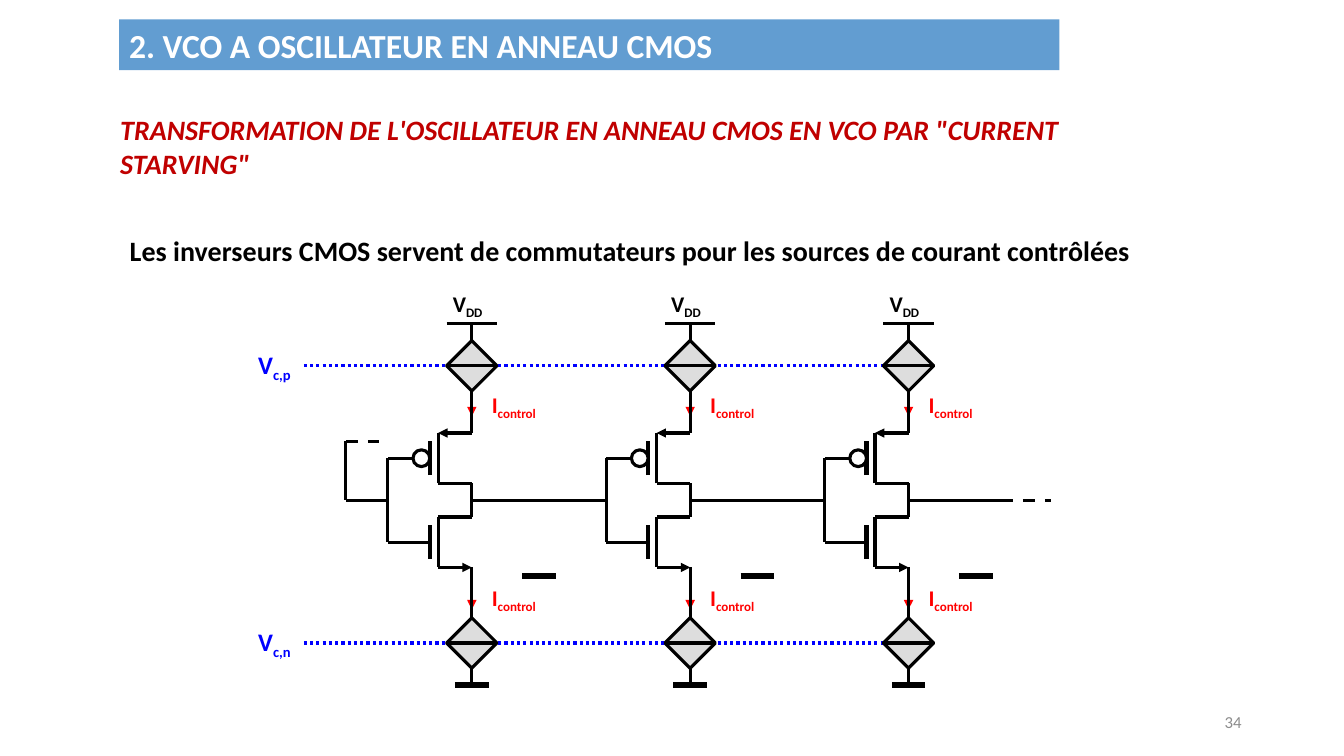
"""Build the slide on the current-starved CMOS ring oscillator."""
from dataclasses import dataclass
from typing import Any, NamedTuple

from lxml.etree import SubElement
from pptx import Presentation
from pptx.dml.color import RGBColor
from pptx.enum.dml import MSO_LINE
from pptx.enum.shapes import MSO_CONNECTOR, MSO_SHAPE
from pptx.enum.text import MSO_ANCHOR, MSO_AUTO_SIZE, PP_ALIGN
from pptx.oxml.ns import qn
from pptx.util import Cm, Pt


@dataclass(frozen=True)
class Theme:
    font: str = "Calibri"
    black: str = "000000"
    white: str = "FFFFFF"
    banner: str = "629DD1"
    heading: str = "C00000"
    control: str = "0000FF"
    current: str = "FF0000"
    source: str = "DDDDDD"
    number: str = "8C8C8C"
    title_size: int = 24
    body_size: int = 20
    control_size: int = 18
    label_size: int = 16
    number_size: int = 12
    wire: float = 2.25
    gate: float = 3
    ground: float = 4.5


THEME = Theme()
GRID = 2.54 / 12
ORIGIN = (11.89, 8.16)
STAGES = (0, 26, 52)
SOURCE_ROWS = (5, 38)


class Wire(NamedTuple):
    x1: float
    y1: float
    x2: float
    y2: float
    width: float = THEME.wire
    color: str = THEME.black
    dash: Any = None
    arrow: bool = False


class Box(NamedTuple):
    left: float
    top: float
    width: float
    height: float


class Label(NamedTuple):
    symbol: str
    index: str
    x: float
    y: float
    width: float
    height: float
    size: int
    color: str


INVERTER = (
    Wire(0, 23, -4, 23),
    Wire(-4, 23, -4, 29),
    Wire(-4, 29, 0, 29, arrow=True),
    Wire(-5, 24, -5, 28, THEME.gate),
    Wire(0, 19, -4, 19),
    Wire(-4, 19, -4, 13),
    Wire(0, 13, -4, 13, arrow=True),
    Wire(-5, 18, -5, 14, THEME.gate),
    Wire(0, 29, 0, 43),
    Wire(-2, 43, 2, 43, THEME.ground),
    Wire(0, 19, 0, 23),
    Wire(0, 0, 0, 13),
    Wire(-3, 0, 3, 0),
    Wire(-7, 16, -10, 16),
    Wire(-5, 26, -10, 26),
    Wire(-10, 16, -10, 26),
    Wire(6, 30, 10, 30, THEME.ground),
)
LINKS = (
    Wire(-15, 21, -10, 21),
    Wire(0, 21, 16, 21),
    Wire(26, 21, 42, 21),
    Wire(52, 21, 63, 21),
    Wire(-15, 14, -15, 21),
    Wire(-15, 14, -11, 14, dash=MSO_LINE.DASH),
    Wire(63, 21, 69, 21, dash=MSO_LINE.DASH),
)
STAGE_LABELS = (
    Label("V", "DD", -5, -5, 9, 4.7, THEME.label_size, THEME.black),
    Label("I", "control", 0, 7, 10, 4.7, THEME.label_size, THEME.current),
    Label("I", "control", 0, 30, 10, 4.7, THEME.label_size, THEME.current),
)
CONTROL_LABELS = tuple(
    Label("V", index, -28, row - 3, 9, 5.1, THEME.control_size, THEME.control)
    for index, row in zip(("c,p", "c,n"), SOURCE_ROWS)
)


def rgb(color: str) -> RGBColor:
    """Turn a hexadecimal code into a colour."""
    return RGBColor.from_string(color)


def grid_x(column: float) -> Cm:
    """Return the slide position of a circuit column."""
    return Cm(ORIGIN[0] + column * GRID)


def grid_y(row: float) -> Cm:
    """Return the slide position of a circuit row."""
    return Cm(ORIGIN[1] + row * GRID)


def apply(target: Any, values: dict[str, Any]) -> None:
    """Set each named attribute on the target."""
    for name, value in values.items():
        setattr(target, name, value)


def add_run(paragraph: Any, text: str, size: int, color: str, **values: Any) -> Any:
    """Add a formatted run to the paragraph."""
    run = paragraph.add_run()
    run.text = text
    apply(run.font, {"name": THEME.font, "size": Pt(size), "bold": True, **values})
    run.font.color.rgb = rgb(color)
    return run


def add_text_box(slide: Any, left: Cm, top: Cm, width: Cm, height: Cm, **values: Any) -> Any:
    """Add a wrapped text box and return its paragraph."""
    frame = slide.shapes.add_textbox(left, top, width, height).text_frame
    apply(frame, {"word_wrap": True, "auto_size": MSO_AUTO_SIZE.SHAPE_TO_FIT_TEXT})
    apply(frame.paragraphs[0], values)
    return frame.paragraphs[0]


def add_line_text(slide: Any, box: Box, text: str, size: int, color: str,
                  alignment: Any = PP_ALIGN.LEFT, **values: Any) -> None:
    """Add one line of text outside the circuit."""
    paragraph = add_text_box(slide, *map(Cm, box), alignment=alignment)
    add_run(paragraph, text, size, color, **values)


def add_label(slide: Any, label: Label, offset: float = 0) -> None:
    """Add a circuit symbol with its subscript."""
    paragraph = add_text_box(
        slide, grid_x(label.x + offset), grid_y(label.y), Cm(label.width * GRID),
        Cm(label.height * GRID), alignment=PP_ALIGN.CENTER, line_spacing=1.1)
    add_run(paragraph, label.symbol, label.size, label.color)
    subscript = add_run(paragraph, label.index, label.size, label.color)
    subscript._r.get_or_add_rPr().set("baseline", "-25000")


def add_wire(slide: Any, wire: Wire, offset: float = 0) -> Any:
    """Draw a circuit line, shifted to its stage."""
    connector = slide.shapes.add_connector(
        MSO_CONNECTOR.STRAIGHT, grid_x(wire.x1 + offset), grid_y(wire.y1),
        grid_x(wire.x2 + offset), grid_y(wire.y2))
    connector.line.color.rgb = rgb(wire.color)
    apply(connector.line, {"width": Pt(wire.width), "dash_style": wire.dash})
    properties = connector._element.spPr
    if wire.arrow:
        SubElement(properties.find(qn("a:ln")), qn("a:tailEnd"), type="triangle")
    SubElement(properties, qn("a:effectLst"))
    return connector


def add_symbol(slide: Any, kind: MSO_SHAPE, x: float, y: float, size: float, fill: str) -> Any:
    """Draw an outlined square-format symbol."""
    shape = slide.shapes.add_shape(
        kind, grid_x(x), grid_y(y), Cm(size * GRID), Cm(size * GRID))
    shape.shadow.inherit = False
    shape.fill.solid()
    shape.fill.fore_color.rgb = rgb(fill)
    shape.line.color.rgb = rgb(THEME.black)
    shape.line.width = Pt(THEME.wire)
    return shape


def add_source(slide: Any, column: float, row: float) -> Any:
    """Draw a controlled current source with its bar."""
    diamond = add_symbol(slide, MSO_SHAPE.DIAMOND, column - 3, row - 3, 6, THEME.source)
    bar = add_wire(slide, Wire(column - 3, row, column + 3, row))
    bar.begin_connect(diamond, 1)
    bar.end_connect(diamond, 3)
    return diamond


def add_circuit(slide: Any) -> None:
    """Draw the three starved inverters and their control lines."""
    controls = [
        add_wire(slide, Wire(-20, row, STAGES[-1] - 3, row, color=THEME.control,
                             dash=MSO_LINE.ROUND_DOT))
        for row in SOURCE_ROWS
    ]
    arrows = {
        (column, row): add_wire(slide, Wire(column, row, column, row + 3,
                                            color=THEME.current, arrow=True))
        for row in (8, 31) for column in STAGES
    }
    for column in STAGES:
        for wire in INVERTER:
            add_wire(slide, wire, column)
        add_symbol(slide, MSO_SHAPE.OVAL, column - 7, 15, 2, THEME.white)
    for wire in LINKS:
        add_wire(slide, wire)
    for row, control in zip(SOURCE_ROWS, controls):
        for column in STAGES:
            diamond = add_source(slide, column, row)
            if (column, row + 3) in arrows:
                arrows[column, row + 3].begin_connect(diamond, 2)
        control.end_connect(diamond, 1)
    for column in STAGES:
        for label in STAGE_LABELS:
            add_label(slide, label, column)
    for label in CONTROL_LABELS:
        add_label(slide, label)


def add_title(slide: Any, text: str) -> None:
    """Turn the title placeholder into the banner."""
    title = slide.shapes.title
    apply(title, {"left": Cm(3), "top": Cm(0.49), "width": Cm(23.7), "height": Cm(1.28)})
    title.fill.solid()
    title.fill.fore_color.rgb = rgb(THEME.banner)
    apply(title.text_frame, {"word_wrap": True, "auto_size": MSO_AUTO_SIZE.NONE,
                             "vertical_anchor": MSO_ANCHOR.MIDDLE})
    paragraph = title.text_frame.paragraphs[0]
    paragraph.alignment = PP_ALIGN.LEFT
    add_run(paragraph, text, THEME.title_size, THEME.white)


def main() -> None:
    """Build and save the presentation."""
    presentation = Presentation()
    apply(presentation, {"slide_width": Cm(33.87), "slide_height": Cm(19.05)})
    slide = presentation.slides.add_slide(presentation.slide_layouts[5])
    add_title(slide, "2. VCO A OSCILLATEUR EN ANNEAU CMOS")
    add_line_text(
        slide, Box(2.78, 2.72, 27.58, 1.11),
        "TRANSFORMATION DE L'OSCILLATEUR EN ANNEAU CMOS EN VCO PAR \"CURRENT STARVING\"",
        THEME.body_size, THEME.heading, italic=True)
    add_line_text(
        slide, Box(3.02, 5.77, 28.22, 1.11),
        "Les inverseurs CMOS servent de commutateurs pour les sources de courant contrôlées",
        THEME.body_size, THEME.black)
    add_circuit(slide)
    add_line_text(slide, Box(23.92, 17.8, 7.62, 0.77), "34", THEME.number_size,
                  THEME.number, PP_ALIGN.RIGHT, bold=False)
    presentation.save("out.pptx")


if __name__ == "__main__":
    main()
